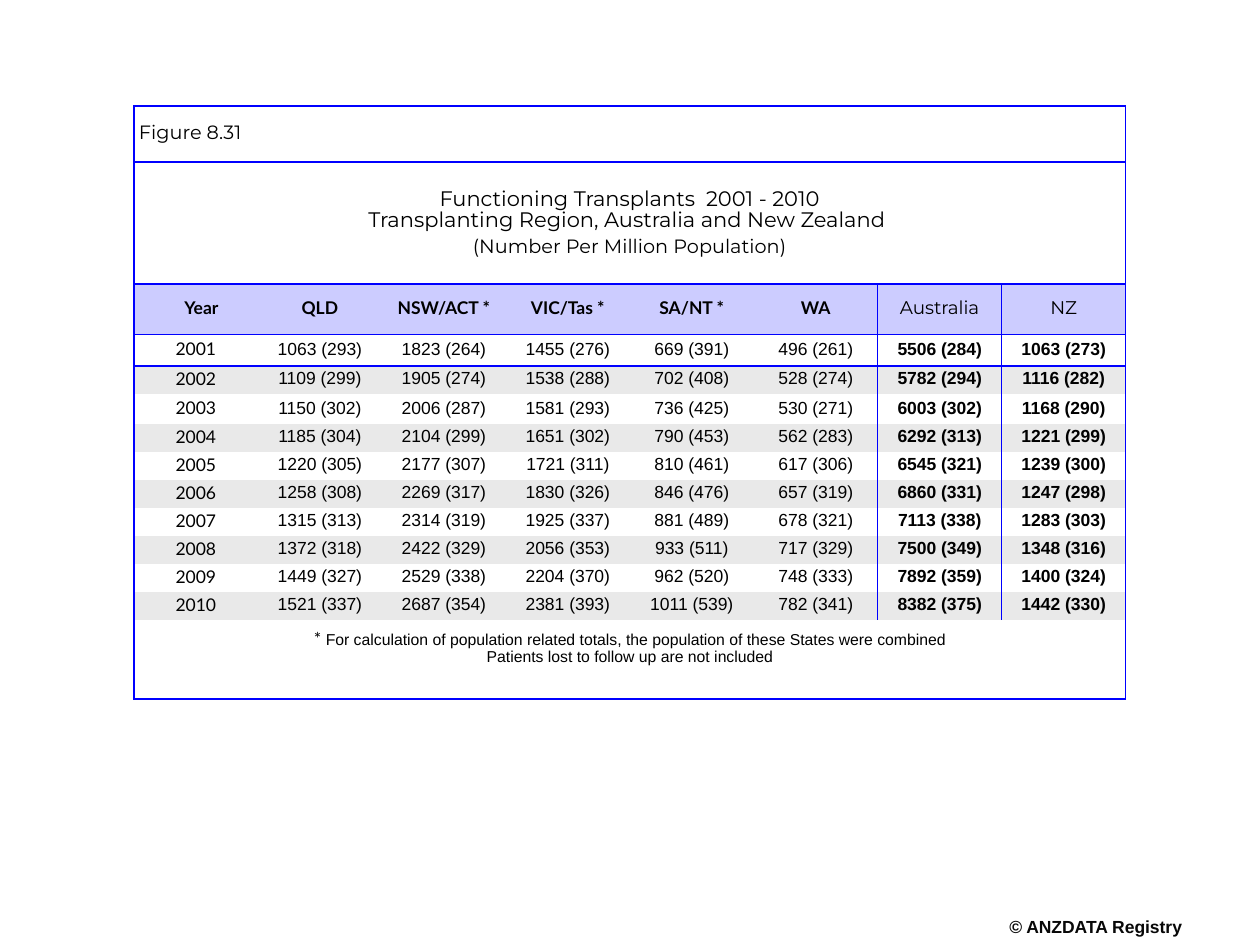
from lxml.etree import SubElement
from pptx import Presentation
from pptx.dml.color import RGBColor
from pptx.enum.text import MSO_ANCHOR, PP_ALIGN
from pptx.oxml.ns import qn
from pptx.util import Pt

COLORS = {"line": "0000FF", "header": "CCCCFF", "band": "E9E9E9",
          "text": "000000", "footer": "080808"}
HEADING = {"name": "Montserrat", "size": Pt(12), "bold": False}
SUBHEADING = HEADING | {"size": Pt(11)}
TOTAL_HEADER = HEADING | {"size": Pt(10.5)}
YEAR = {"name": "Lato", "size": Pt(10), "bold": False}
STATE_HEADER = YEAR | {"bold": True}
NUMBER = {"name": "Arial", "size": Pt(10), "bold": False}
TOTAL = NUMBER | {"bold": True}
NOTE = NUMBER | {"size": Pt(9)}

REGIONS = ["Year", "QLD", "NSW/ACT *", "VIC/Tas *", "SA/NT *", "WA", "Australia", "NZ"]
TRANSPLANTS = [
    ["2001", "1063 (293)", "1823 (264)", "1455 (276)", "669 (391)", "496 (261)", "5506 (284)", "1063 (273)"],
    ["2002", "1109 (299)", "1905 (274)", "1538 (288)", "702 (408)", "528 (274)", "5782 (294)", "1116 (282)"],
    ["2003", "1150 (302)", "2006 (287)", "1581 (293)", "736 (425)", "530 (271)", "6003 (302)", "1168 (290)"],
    ["2004", "1185 (304)", "2104 (299)", "1651 (302)", "790 (453)", "562 (283)", "6292 (313)", "1221 (299)"],
    ["2005", "1220 (305)", "2177 (307)", "1721 (311)", "810 (461)", "617 (306)", "6545 (321)", "1239 (300)"],
    ["2006", "1258 (308)", "2269 (317)", "1830 (326)", "846 (476)", "657 (319)", "6860 (331)", "1247 (298)"],
    ["2007", "1315 (313)", "2314 (319)", "1925 (337)", "881 (489)", "678 (321)", "7113 (338)", "1283 (303)"],
    ["2008", "1372 (318)", "2422 (329)", "2056 (353)", "933 (511)", "717 (329)", "7500 (349)", "1348 (316)"],
    ["2009", "1449 (327)", "2529 (338)", "2204 (370)", "962 (520)", "748 (333)", "7892 (359)", "1400 (324)"],
    ["2010", "1521 (337)", "2687 (354)", "2381 (393)", "1011 (539)", "782 (341)", "8382 (375)", "1442 (330)"],
]
ROW_HEIGHTS = [32.2, 69.6, 28.8, 18, 16.2, 17] + [16] * 7 + [45.4]
COLUMN_WIDTH = 70.85
FIRST_TOTAL = REGIONS.index("Australia")
NO_STYLE = "{2D5ABB26-0587-4C30-8999-92F81FD0307C}"


class SlideWriter:
    def __init__(self, page):
        self.page = page

    def paragraph(self, frame, spans, first=False, color="text", **layout):
        """Write (text, font format) spans as one paragraph."""
        para = frame.paragraphs[0] if first else frame.add_paragraph()
        for name, value in ({"alignment": PP_ALIGN.CENTER, "line_spacing": 0.85} | layout).items():
            setattr(para, name, value)
        for text, style in spans:
            span = para.add_run()
            span.text = text
            for name, value in style.items():
                setattr(span.font, name, value)
            span.font.color.rgb = RGBColor.from_string(COLORS[color])

    def text_box(self, left, top, width, height, text, style, color):
        box = self.page.shapes.add_textbox(Pt(left), Pt(top), Pt(width), Pt(height))
        frame = box.text_frame
        for side in ("left", "right", "top", "bottom"):
            setattr(frame, f"margin_{side}", 0)
        frame.word_wrap = False
        frame.vertical_anchor = MSO_ANCHOR.MIDDLE
        self.paragraph(frame, [(text, style)], first=True, color=color)

    def table(self, left, top, column_width, columns, heights):
        shape = self.page.shapes.add_table(len(heights), columns, Pt(left), Pt(top),
                                           Pt(column_width * columns), Pt(sum(heights)))
        table = shape.table
        table.first_row = table.horz_banding = False
        shape._element.find(".//" + qn("a:tableStyleId")).text = NO_STYLE
        for column in table.columns:
            column.width = Pt(column_width)
        for row, height in zip(table.rows, heights):
            row.height = Pt(height)
        return table

    def cell(self, cell, sides, fill=None):
        """Set the margins, borders (some of L, R, T, B) and fill of a cell."""
        margins = {"left": 2.9, "right": 2.9, "top": 1.4, "bottom": 1.4}
        for side, value in margins.items():
            setattr(cell, f"margin_{side}", Pt(value))
        cell.vertical_anchor = MSO_ANCHOR.MIDDLE
        properties = cell._tc.get_or_add_tcPr()
        for side in "LRTB":
            if side in sides:
                line = SubElement(properties, qn(f"a:ln{side}"), w=str(Pt(1)))
                solid = SubElement(line, qn("a:solidFill"))
                SubElement(solid, qn("a:srgbClr"), val=COLORS["line"])
        if fill:
            cell.fill.solid()
            cell.fill.fore_color.rgb = RGBColor.from_string(COLORS[fill])
        else:
            cell.fill.background()

    def merged_row(self, table, row, sides):
        """Join a whole row and return its cell."""
        cells = list(table.rows[row].cells)
        for cell in cells:
            inner = "" if cell is cells[0] else "L" if cell is cells[-1] else "LR"
            self.cell(cell, [side for side in sides if side not in inner])
        cells[0].merge(cells[-1])
        return cells[0]

    def data_row(self, table, row, texts, styles, sides, fill=None):
        for column, (text, style) in enumerate(zip(texts, styles)):
            edges = sides
            if column == 0 or column >= FIRST_TOTAL:
                edges += "L"
            if column >= FIRST_TOTAL - 1:
                edges += "R"
            cell = table.cell(row, column)
            self.cell(cell, edges, fill)
            self.paragraph(cell.text_frame, [(text, style)], first=True)


def main():
    deck = Presentation()
    deck.slide_width, deck.slide_height = Pt(720), Pt(540)
    writer = SlideWriter(deck.slides.add_slide(deck.slide_layouts[6]))

    # Copyright line
    writer.text_box(575.3, 524.2, 101.5, 12.2, "© ANZDATA Registry", TOTAL, "footer")

    # Figure number and heading
    table = writer.table(76.5, 60.5, COLUMN_WIDTH, len(REGIONS), ROW_HEIGHTS)
    frame = writer.merged_row(table, 0, "LRTB").text_frame
    writer.paragraph(frame, [("Figure 8.31", SUBHEADING)], first=True, alignment=PP_ALIGN.LEFT)
    frame = writer.merged_row(table, 1, "LRTB").text_frame
    writer.paragraph(frame, [("Functioning Transplants  2001 - 2010", HEADING)], first=True)
    writer.paragraph(frame, [("Transplanting Region, Australia and New Zealand ", HEADING)])
    writer.paragraph(frame, [("(Number Per Million Population)", SUBHEADING)], space_before=Pt(3))

    # Column headers and yearly figures
    totals = len(REGIONS) - FIRST_TOTAL
    header_styles = [STATE_HEADER] * FIRST_TOTAL + [TOTAL_HEADER] * totals
    writer.data_row(table, 2, REGIONS, header_styles, "TB", "header")
    table.cell(2, 0).margin_left = Pt(9.2)
    number_styles = [YEAR] + [NUMBER] * (FIRST_TOTAL - 1) + [TOTAL] * totals
    for index, figures in enumerate(TRANSPLANTS):
        writer.data_row(table, 3 + index, figures, number_styles,
                        "" if index else "T", "band" if index % 2 else None)

    # Footnotes
    notes = writer.merged_row(table, len(ROW_HEIGHTS) - 1, "LRB")
    notes.margin_bottom = Pt(14.4)
    writer.paragraph(notes.text_frame, [
        ("* ", YEAR),
        ("For calculation of population related totals, "
         "the population of these States were combined", NOTE)], first=True)
    writer.paragraph(notes.text_frame, [("Patients lost to follow up are not included", NOTE)],
                     space_before=Pt(1))

    deck.save("out.pptx")


if __name__ == "__main__":
    main()
